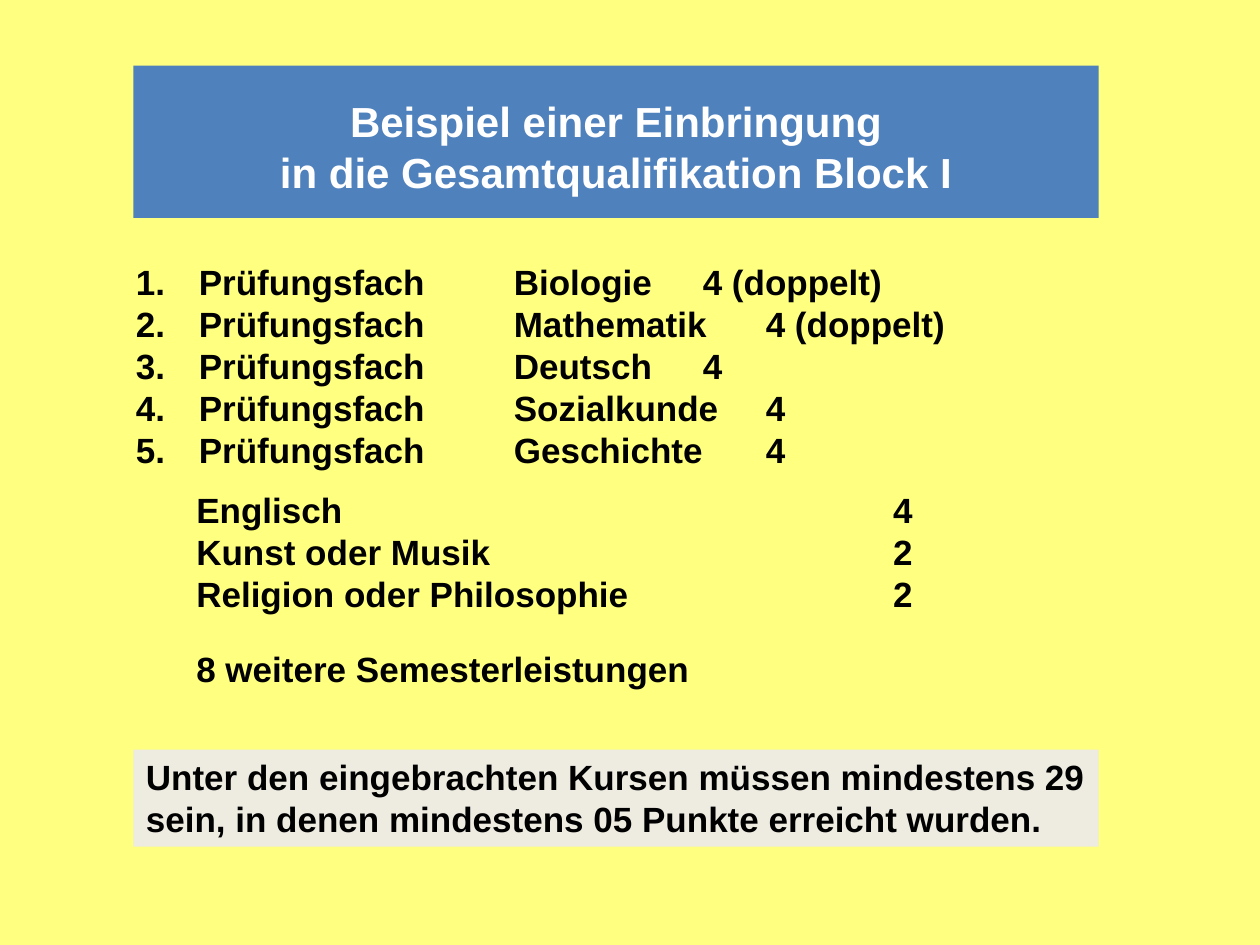
from dataclasses import dataclass

from lxml import etree
from pptx import Presentation
from pptx import util as u
from pptx.dml.color import RGBColor
from pptx.enum import shapes, text
from pptx.oxml import ns


@dataclass(frozen=True)
class Theme:
    font: str = "Arial"
    background: str = "FFFF80"
    banner: str = "4F81BD"
    note: str = "EEECE1"
    dark: str = "000000"
    light: str = "FFFFFF"
    title_size: int = 24
    body_size: int = 20


THEME = Theme()
BAND_LEFT, BAND_WIDTH = 1.06, 7.66
COURSE_LEFT = 1.46
INDENT = 0.5
COUNT_TAB = 5.53

EXAM_SUBJECTS = [
    ("Biologie", "4 (doppelt)"),
    ("Mathematik", "4 (doppelt)"),
    ("Deutsch", "4"),
    ("Sozialkunde", "4"),
    ("Geschichte", "4"),
]
OTHER_COURSES = [
    ("Englisch", "4"),
    ("Kunst oder Musik", "2"),
    ("Religion oder Philosophie", "2"),
]


def write_lines(shape, lines, size=THEME.body_size, color=THEME.dark,
                align=text.PP_ALIGN.LEFT):
    """Write one bold paragraph per line and return the paragraphs."""
    frame = shape.text_frame
    frame.word_wrap = True
    frame.vertical_anchor = text.MSO_ANCHOR.TOP
    paras = []
    for index, line in enumerate(lines):
        para = frame.add_paragraph() if index else frame.paragraphs[0]
        para.alignment = align
        span = para.add_run()
        span.text = line
        span.font.name = THEME.font
        span.font.size = u.Pt(size)
        span.font.bold = True
        span.font.color.rgb = RGBColor.from_string(color)
        paras.append(para)
    return paras


def add_text(page, box, lines):
    label = page.shapes.add_textbox(*map(u.Inches, box))
    return write_lines(label, lines)


def add_band(page, box, fill):
    band = page.shapes.add_shape(shapes.MSO_SHAPE.RECTANGLE, *map(u.Inches, box))
    band.shadow.inherit = False
    band.fill.solid()
    band.fill.fore_color.rgb = RGBColor.from_string(fill)
    band.line.fill.background()
    return band


def number_paragraph(para):
    properties = para._p.get_or_add_pPr()
    properties.set("marL", str(u.Inches(INDENT)))
    properties.set("indent", str(-u.Inches(INDENT)))
    etree.SubElement(properties, ns.qn("a:buFont"), typeface="+mj-lt")
    etree.SubElement(properties, ns.qn("a:buAutoNum"), type="arabicPeriod")


def add_tab_stop(para, position):
    stops = etree.SubElement(para._p.get_or_add_pPr(), ns.qn("a:tabLst"))
    etree.SubElement(stops, ns.qn("a:tab"), pos=str(u.Inches(position)), algn="l")


def add_title(page, box):
    band = add_band(page, box, THEME.banner)
    band.text_frame.margin_top = u.Inches(0.24)
    write_lines(band,
                ["Beispiel einer Einbringung", "in die Gesamtqualifikation Block I"],
                THEME.title_size, THEME.light, text.PP_ALIGN.CENTER)


def add_exam_subjects(page, box):
    lines = [f"Prüfungsfach\t\t{subject}\t{count}" for subject, count in EXAM_SUBJECTS]
    for para in add_text(page, box, lines):
        number_paragraph(para)


def add_other_courses(page, box):
    for para in add_text(page, box, ["\t".join(row) for row in OTHER_COURSES]):
        add_tab_stop(para, COUNT_TAB)


def add_note(page, box):
    write_lines(add_band(page, box, THEME.note), [
        "Unter den eingebrachten Kursen müssen mindestens 29 sein, "
        "in denen mindestens 05 Punkte erreicht wurden."])


def main():
    deck = Presentation()
    deck.slide_width, deck.slide_height = u.Inches(10), u.Inches(7.5)
    page = deck.slides.add_slide(deck.slide_layouts[6])
    page.background.fill.solid()
    page.background.fill.fore_color.rgb = RGBColor.from_string(THEME.background)

    add_exam_subjects(page, (0.98, 2.02, 8, 1.78))
    add_title(page, (BAND_LEFT, 0.52, BAND_WIDTH, 1.21))
    add_other_courses(page, (COURSE_LEFT, 3.83, BAND_WIDTH, 1.11))
    add_text(page, (COURSE_LEFT, 5.09, 7.5, 0.44), ["8 weitere Semesterleistungen"])
    add_note(page, (BAND_LEFT, 5.95, BAND_WIDTH, 0.77))
    deck.save("out.pptx")


if __name__ == "__main__":
    main()
